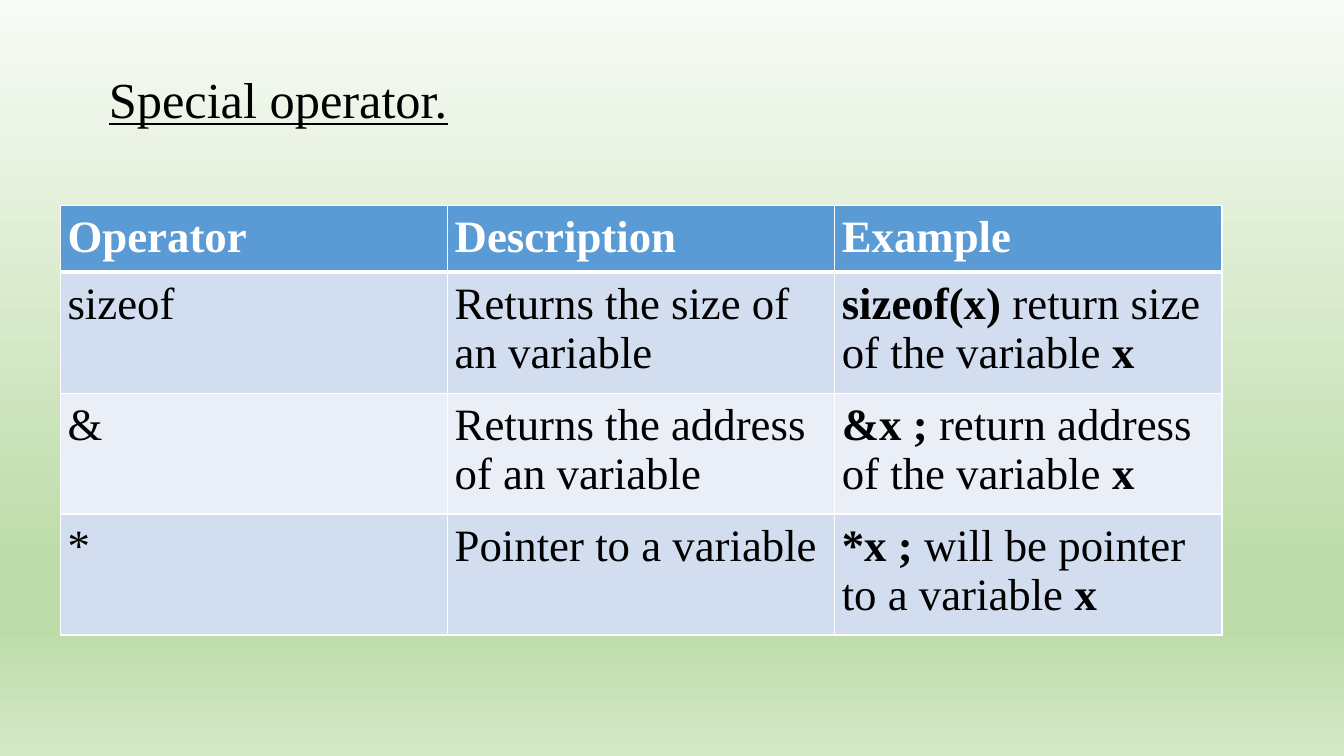
from lxml import etree
from pptx import Presentation
from pptx.dml.color import RGBColor
from pptx.enum.text import MSO_ANCHOR, PP_ALIGN
from pptx.oxml.ns import qn
from pptx.util import Inches, Pt

LEFT = PP_ALIGN.LEFT
MIDDLE = MSO_ANCHOR.MIDDLE
FONT = "Times New Roman"
BLACK, WHITE, HEADER = "000000", "FFFFFF", "5B9BD5"
BANDS = ("D2DEEF", "EAEFF7")
BACKGROUND = ((0, "F8FBF6"), (74, "BEDCAA"), (83, "BEDCAA"), (100, "D4E8C6"))
COLUMN_WIDTH, HEADER_HEIGHT, ROW_HEIGHT = 3.84, 0.66, 1.2
TABLE_LEFT, TABLE_TOP = 0.6, 2.04
INSET = 0.07
HEADINGS = ("Operator", "Description", "Example")
OPERATORS = (
    ("sizeof", "Returns the size of an variable",
     ("sizeof(x)", " return size of the variable ", "x")),
    ("&", "Returns the address of an variable",
     ("&x ;", " return address of the variable ", "x")),
    ("*", "Pointer to a variable",
     ("*x ;", " will be pointer to a variable ", "x")),
)


def color(value):
    return RGBColor.from_string(value)


def style_font(font, size, value, bold=False):
    font.name = FONT
    font.size = Pt(size)
    font.bold = bold
    font.color.rgb = color(value)


def paint_background(slide):
    fill = slide.background.fill
    fill.gradient()
    fill.gradient_angle = 270
    stops = next(slide.background._cSld.iter(qn("a:gsLst")))
    for stop in list(stops):
        stops.remove(stop)
    for percent, value in BACKGROUND:
        stop = etree.SubElement(stops, qn("a:gs"), pos=str(percent * 1000))
        etree.SubElement(stop, qn("a:srgbClr"), val=value)


def add_title(slide, text):
    title = slide.shapes.title
    title.left, title.top = Inches(0.98), Inches(0.62)
    title.width, title.height = Inches(9.32), Inches(0.71)
    frame = title.text_frame
    frame.text = text
    frame.vertical_anchor = MIDDLE
    para = frame.paragraphs[0]
    para.alignment = LEFT
    span = para.runs[0]
    style_font(span.font, 36, BLACK)
    span.font.underline = True


def add_borders(cell, top, bottom):
    properties = cell._tc.get_or_add_tcPr()
    for side, width in (("L", 1), ("R", 1), ("T", top), ("B", bottom)):
        line = etree.SubElement(properties, qn(f"a:ln{side}"), w=str(Pt(width)))
        solid = etree.SubElement(line, qn("a:solidFill"))
        etree.SubElement(solid, qn("a:srgbClr"), val=WHITE)


def fill_cell(cell, parts, fill, value, bold_first):
    cell.margin_left = cell.margin_right = Inches(INSET)
    cell.margin_top = cell.margin_bottom = Inches(INSET)
    cell.fill.solid()
    cell.fill.fore_color.rgb = color(fill)
    para = cell.text_frame.paragraphs[0]
    for index, part in enumerate(parts):
        span = para.add_run()
        span.text = part
        style_font(span.font, 32, value, bold_first and index % 2 == 0)


def add_operator_table(slide):
    row_count, column_count = len(OPERATORS) + 1, len(HEADINGS)
    table = slide.shapes.add_table(
        row_count, column_count, Inches(TABLE_LEFT), Inches(TABLE_TOP),
        Inches(COLUMN_WIDTH * column_count),
        Inches(HEADER_HEIGHT + ROW_HEIGHT * len(OPERATORS))).table
    for column in table.columns:
        column.width = Inches(COLUMN_WIDTH)
    for number, content in enumerate((HEADINGS,) + OPERATORS):
        header = number == 0
        table.rows[number].height = Inches(HEADER_HEIGHT if header else ROW_HEIGHT)
        fill = HEADER if header else BANDS[(number - 1) % 2]
        for position, entry in enumerate(content):
            cell = table.cell(number, position)
            parts = (entry,) if isinstance(entry, str) else entry
            add_borders(cell, 3 if number == 1 else 1, 3 if header else 1)
            fill_cell(cell, parts, fill, WHITE if header else BLACK,
                      header or len(parts) > 1)


def main():
    deck = Presentation()
    deck.slide_width, deck.slide_height = Inches(13.33), Inches(7.5)
    slide = deck.slides.add_slide(deck.slide_layouts[5])
    paint_background(slide)
    add_title(slide, "Special operator.")
    add_operator_table(slide)
    deck.save("out.pptx")


if __name__ == "__main__":
    main()
